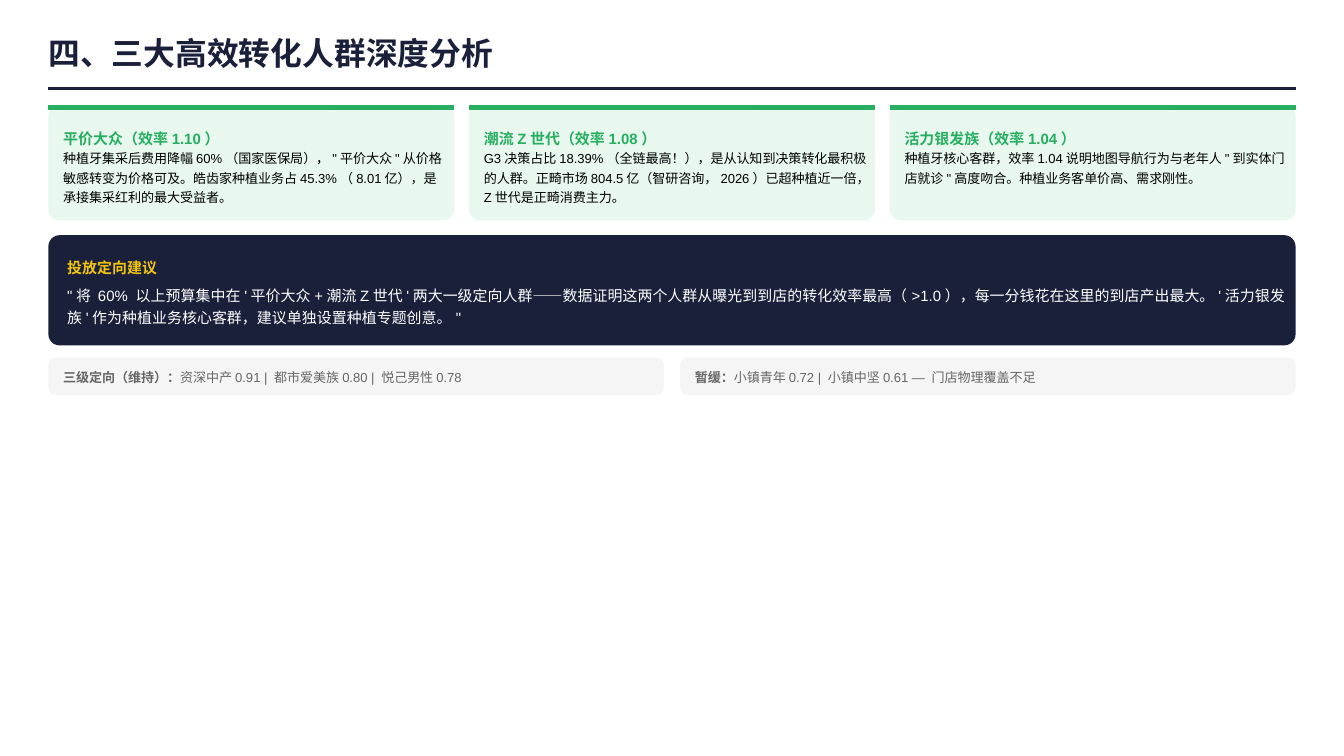
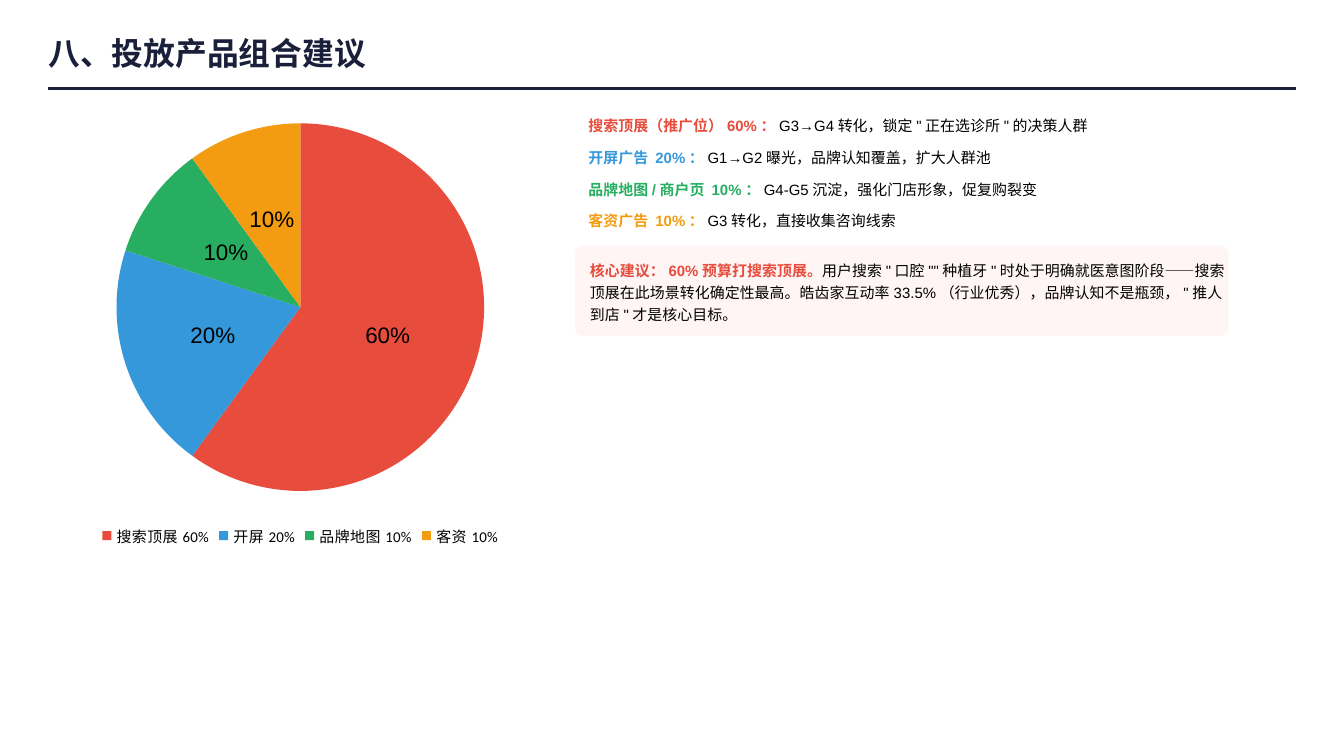
"""Build two slides on audience groups and the advertising product mix."""
from lxml import etree
from pptx import Presentation
from pptx.chart.data import CategoryChartData
from pptx.dml.color import RGBColor
from pptx.enum.chart import XL_CHART_TYPE as ChartType
from pptx.enum.chart import XL_LABEL_POSITION as LabelPosition
from pptx.enum.chart import XL_LEGEND_POSITION as LegendPosition
from pptx.enum.shapes import MSO_CONNECTOR as Connector
from pptx.enum.shapes import MSO_SHAPE as Shape
from pptx.oxml.ns import qn
from pptx.util import Inches, Pt

NAVY = RGBColor(0x1A, 0x1F, 0x3A)
GREEN = RGBColor(0x27, 0xAE, 0x60)
RED = RGBColor(0xE7, 0x4C, 0x3C)
BLUE = RGBColor(0x34, 0x98, 0xDB)
ORANGE = RGBColor(0xF3, 0x9C, 0x12)
YELLOW = RGBColor(0xF1, 0xC4, 0x0F)
MINT = RGBColor(0xE8, 0xF8, 0xEF)
PINK = RGBColor(0xFF, 0xF5, 0xF5)
PALE = RGBColor(0xF5, 0xF5, 0xF5)
EDGE = RGBColor(0xF9, 0xF9, 0xF9)
GREY = RGBColor(0x66, 0x66, 0x66)
BLACK = RGBColor(0, 0, 0)
WHITE = RGBColor(0xFF, 0xFF, 0xFF)

FONT = "Arial"
PAGE_WIDTH = 10
PAGE_HEIGHT = PAGE_WIDTH * 9 / 16
LEFT, WIDTH, GAP, TOP = 0.36, 9.28, 0.11, 0.78
INSET = 0.11

AUDIENCE_TITLE = "四、三大高效转化人群深度分析"
AUDIENCES = [
    ("平价大众（效率1.10）", 0.44,
     "种植牙集采后费用降幅60%（国家医保局），\"平价大众\"从价格敏感转变为价格可及。"
     "皓齿家种植业务占45.3%（8.01亿），是承接集采红利的最大受益者。"),
    ("潮流Z世代（效率1.08）", 0.44,
     "G3决策占比18.39%（全链最高！），是从认知到决策转化最积极的人群。"
     "正畸市场804.5亿（智研咨询，2026）已超种植近一倍，Z世代是正畸消费主力。"),
    ("活力银发族（效率1.04）", 0.29,
     "种植牙核心客群，效率1.04说明地图导航行为与老年人\"到实体门店就诊\"高度吻合。"
     "种植业务客单价高、需求刚性。"),
]
ADVICE_HEAD = "投放定向建议"
ADVICE = (
    "\"将 60% 以上预算集中在'平价大众+潮流Z世代'两大一级定向人群——"
    "数据证明这两个人群从曝光到到店的转化效率最高（>1.0），每一分钱花在这里的到店产出最大。"
    "'活力银发族'作为种植业务核心客群，建议单独设置种植专题创意。\""
)
OTHER_TIERS = [
    ("三级定向（维持）：", "资深中产0.91 | 都市爱美族0.80 | 悦己男性0.78"),
    ("暂缓：", "小镇青年0.72 | 小镇中坚0.61 — 门店物理覆盖不足"),
]

PRODUCT_TITLE = "八、投放产品组合建议"
PRODUCTS = [
    ("搜索顶展60%", 60, RED, "搜索顶展（推广位）60%：", "G3→G4转化，锁定\"正在选诊所\"的决策人群"),
    ("开屏20%", 20, BLUE, "开屏广告 20%：", "G1→G2曝光，品牌认知覆盖，扩大人群池"),
    ("品牌地图10%", 10, GREEN, "品牌地图/商户页 10%：", "G4-G5沉淀，强化门店形象，促复购裂变"),
    ("客资10%", 10, ORANGE, "客资广告 10%：", "G3转化，直接收集咨询线索"),
]
CORE_HEAD = "核心建议：60%预算打搜索顶展。"
CORE = (
    "用户搜索\"口腔\"\"种植牙\"时处于明确就医意图阶段——搜索顶展在此场景转化确定性最高。"
    "皓齿家互动率33.5%（行业优秀），品牌认知不是瓶颈，\"推人到店\"才是核心目标。"
)


def set_values(target, values):
    for name, value in values.items():
        setattr(target, name, value)


def add_text(page, area, paragraphs, size, spacing=None, after=None, indent=0):
    """Each paragraph is a list of (text, colour, bold) spans."""
    frame = page.shapes.add_textbox(*map(Inches, area)).text_frame
    set_values(frame, {"word_wrap": True, "margin_left": Inches(indent),
                       "margin_top": 0, "margin_right": 0, "margin_bottom": 0})
    for index, spans in enumerate(paragraphs):
        para = frame.add_paragraph() if index else frame.paragraphs[0]
        if spacing:
            para.line_spacing = Pt(spacing)
        if after:
            para.space_after = Pt(after)
        for text, colour, bold in spans:
            span = para.add_run()
            span.text = text
            set_values(span.font, {"name": FONT, "size": Pt(size), "bold": bold})
            span.font.color.rgb = colour


def add_panel(page, area, colour, rounding):
    panel = page.shapes.add_shape(Shape.ROUNDED_RECTANGLE, *map(Inches, area))
    panel.adjustments[0] = rounding
    panel.shadow.inherit = False
    panel.fill.solid()
    panel.fill.fore_color.rgb = colour
    panel.line.fill.background()


def add_rule(page, left, top, width, colour, weight):
    ends = map(Inches, (left, top, left + width, top))
    rule = page.shapes.add_connector(Connector.STRAIGHT, *ends)
    rule.line.color.rgb = colour
    rule.line.width = Pt(weight)
    etree.SubElement(rule._element.spPr, qn("a:effectLst"))


def add_page(deck, title):
    page = deck.slides.add_slide(deck.slide_layouts[6])
    add_rule(page, LEFT, 0.66, WIDTH, NAVY, 1.5)
    add_text(page, (LEFT, 0.25, 9.46, 0.33), [[(title, NAVY, True)]], 17)
    return page


def columns(count, gap):
    width = (WIDTH - gap * (count - 1)) / count
    return [(LEFT + index * (width + gap), width) for index in range(count)]


def build_audiences(deck):
    page = add_page(deck, AUDIENCE_TITLE)
    for (left, width), (head, height, body) in zip(columns(3, GAP), AUDIENCES):
        add_panel(page, (left, TOP, width, 0.86), MINT, 0.097)
        add_rule(page, left, 0.8, width, GREEN, 2.25)
        add_text(page, (left + INSET, 0.93, 2.85, 0.17), [[(head, GREEN, True)]], 8, 12)
        add_text(page, (left + INSET, 1.09, 2.85, height), [[(body, BLACK, False)]], 7, 10.5)

    add_panel(page, (LEFT, 1.75, WIDTH, 0.82), NAVY, 0.102)
    add_text(page, (0.5, 1.89, 9.18, 0.17), [[(ADVICE_HEAD, YELLOW, True)]], 8, 12, 3)
    add_text(page, (0.5, 2.1, 9.18, 0.33), [[(ADVICE, WHITE, False)]], 8, 12)

    for (left, width), (head, body) in zip(columns(2, 0.12), OTHER_TIERS):
        add_panel(page, (left, 2.66, width, 0.28), PALE, 0.195)
        add_text(page, (left + INSET, 2.72, 4.45, 0.15),
                 [[(head, GREY, True), (body, GREY, False)]], 7, 10.5)


def add_mix_chart(page):
    data = CategoryChartData()
    data.categories = [name for name, *_ in PRODUCTS]
    data.add_series("Series 1", [share for _, share, *_ in PRODUCTS])
    area = map(Inches, (LEFT, TOP, 3.75, 3.33))
    chart = page.shapes.add_chart(ChartType.PIE, *area, data).chart
    set_values(chart, {"has_title": False, "has_legend": True})
    set_values(chart.font, {"name": "Calibri", "size": Pt(10)})
    chart.font.color.rgb = BLACK
    set_values(chart.legend, {"position": LegendPosition.BOTTOM, "include_in_layout": False})
    set_values(chart.legend.font, {"name": "Calibri", "size": Pt(8)})

    plot = chart.plots[0]
    set_values(plot, {"vary_by_categories": True, "has_data_labels": True})
    series = plot.series[0]
    series.format.line.color.rgb = EDGE
    series.format.line.width = Pt(0.75)
    for index, (_, _, colour, *_) in enumerate(PRODUCTS):
        fill = series.points[index].format.fill
        fill.solid()
        fill.fore_color.rgb = colour

    labels = plot.data_labels
    set_values(labels, {"show_percentage": True, "show_value": False,
                        "number_format": "0%", "number_format_is_linked": False,
                        "position": LabelPosition.CENTER})
    set_values(labels.font, {"name": FONT, "size": Pt(12)})
    labels.font.color.rgb = BLACK


def build_products(deck):
    page = add_page(deck, PRODUCT_TITLE)
    left, width = 4.28, 4.86
    lines = [[(head, colour, True), (body, BLACK, False)]
             for _, _, colour, head, body in PRODUCTS]
    add_text(page, (left, TOP, width, 0.93), lines, 8, 16, 1, 0.1)
    add_panel(page, (left, 1.83, width, 0.67), PINK, 0.083)
    add_text(page, (left + INSET, 1.91, 4.73, 0.5),
             [[(CORE_HEAD, RED, True), (CORE, BLACK, False)]], 8, 12)
    add_mix_chart(page)


def main():
    deck = Presentation()
    deck.slide_width, deck.slide_height = Inches(PAGE_WIDTH), Inches(PAGE_HEIGHT)
    build_audiences(deck)
    build_products(deck)
    deck.save("out.pptx")


if __name__ == "__main__":
    main()
